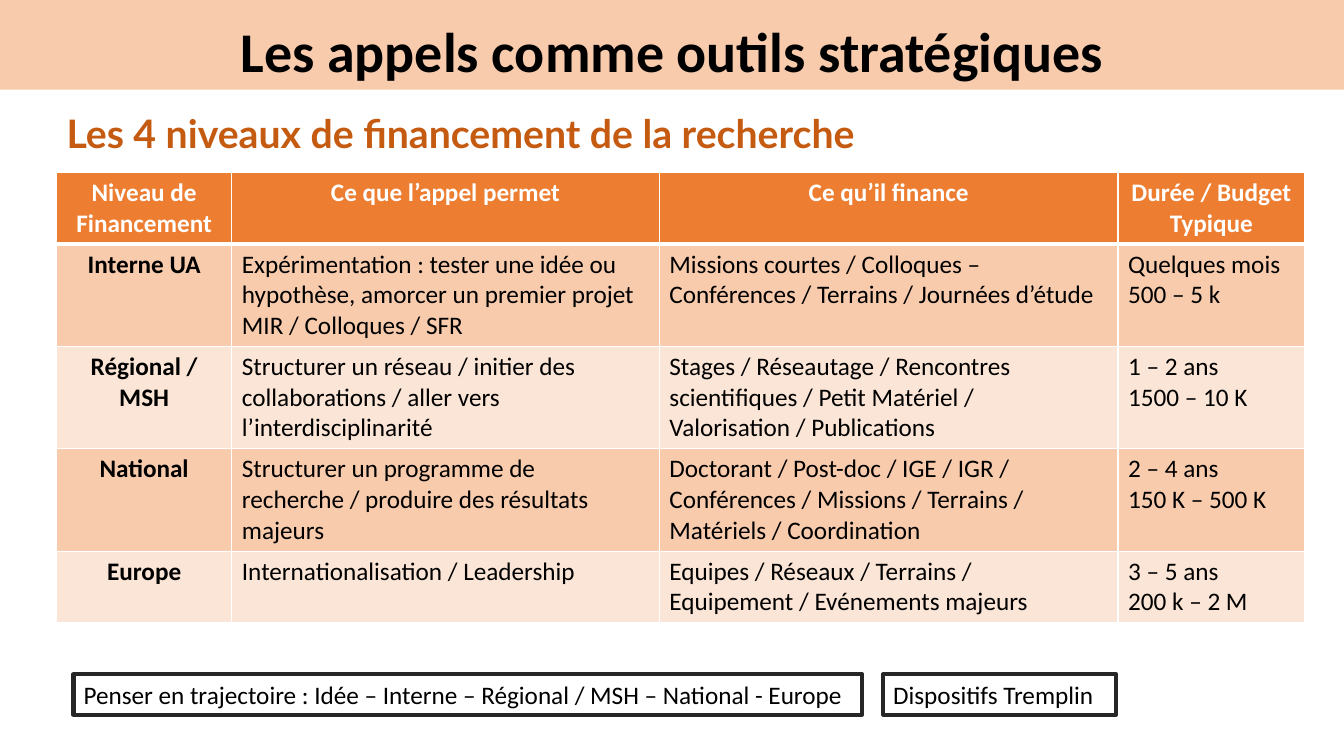
from lxml.etree import SubElement
from pptx import Presentation
from pptx.dml.color import RGBColor
from pptx.enum.shapes import MSO_SHAPE
from pptx.enum.text import MSO_ANCHOR, MSO_AUTO_SIZE, PP_ALIGN
from pptx.oxml.ns import qn
from pptx.util import Inches, Pt

WIDTH, HEIGHT = 13.33, 7.5
LEFT = 0.56
ORANGE, PEACH, CREAM = "ED7D31", "F8CBAD", "FBE5D6"
WHITE, BLACK, RUST, CHARCOAL = "FFFFFF", "000000", "C55A11", "262626"
COLUMN_WIDTHS = [1.74, 4.24, 4.55, 1.85]
LINE_HEIGHT, CELL_PADDING = 0.305, 0.1
ROW_LINES = [2, 3, 3, 3, 2]

FUNDING_LEVELS = [
    ["Niveau de Financement", "Ce que l’appel permet", "Ce qu’il finance",
     "Durée / Budget Typique"],
    ["Interne UA",
     "Expérimentation : tester une idée ou hypothèse, amorcer un premier projet "
     "MIR / Colloques / SFR",
     "Missions courtes / Colloques – Conférences / Terrains / Journées d’étude",
     "Quelques mois\n500 – 5 k"],
    ["Régional / MSH",
     "Structurer un réseau / initier des collaborations / aller vers "
     "l’interdisciplinarité",
     "Stages / Réseautage / Rencontres scientifiques / Petit Matériel / "
     "Valorisation / Publications",
     "1 – 2 ans\n1500 – 10 K"],
    ["National",
     "Structurer un programme de recherche / produire des résultats majeurs",
     "Doctorant / Post-doc / IGE / IGR / Conférences / Missions / Terrains / "
     "Matériels / Coordination",
     "2 – 4 ans\n150 K – 500 K"],
    ["Europe", "Internationalisation / Leadership",
     "Equipes / Réseaux / Terrains / Equipement / Evénements majeurs",
     "3 – 5 ans\n200 k – 2 M"],
]


def rgb(color):
    return RGBColor.from_string(color)


def write(tf, text, size=18, color=BLACK, bold=False, align=PP_ALIGN.LEFT,
          font="Calibri"):
    """Fill a text frame and format all of its runs alike."""
    tf.text = text
    tf.word_wrap = True
    for p in tf.paragraphs:
        p.alignment = align
        for r in p.runs:
            r.font.name, r.font.size, r.font.bold = font, Pt(size), bold
            r.font.color.rgb = rgb(color)


def place(sp, left, top, width, height):
    sp.left, sp.top = Inches(left), Inches(top)
    sp.width, sp.height = Inches(width), Inches(height)


def add_banner(s, text):
    sp = s.shapes.add_shape(MSO_SHAPE.RECTANGLE, 0, 0, Inches(WIDTH),
                            Inches(0.89))
    sp.shadow.inherit = False
    sp.fill.solid()
    sp.fill.fore_color.rgb = rgb(PEACH)
    sp.line.fill.background()
    write(sp.text_frame, text, 40, bold=True, align=PP_ALIGN.CENTER)
    sp.text_frame.vertical_anchor = MSO_ANCHOR.BOTTOM
    sp.text_frame.paragraphs[0].line_spacing = 0.9


def format_title(s, text):
    title = s.shapes.title
    place(title, LEFT, 1.02, 12.21, 0.58)
    tf = title.text_frame
    write(tf, text, 28, RUST, True, font="Lato")
    tf.vertical_anchor = MSO_ANCHOR.BOTTOM
    tf.auto_size = MSO_AUTO_SIZE.NONE


def add_borders(cell, **widths):
    """Draw white borders, with widths in points keyed by side L, R, T, B."""
    tcPr = cell._tc.get_or_add_tcPr()
    for side, width in widths.items():
        ln = SubElement(tcPr, qn(f"a:ln{side}"), w=str(Pt(width)))
        fill = SubElement(ln, qn("a:solidFill"))
        SubElement(fill, qn("a:srgbClr"), val=WHITE)


def add_funding_table(s):
    heights = [n * LINE_HEIGHT + CELL_PADDING for n in ROW_LINES]
    table = s.shapes.add_table(
        len(heights), len(COLUMN_WIDTHS), Inches(LEFT), Inches(1.71),
        Inches(sum(COLUMN_WIDTHS)), Inches(sum(heights))).table
    table.horz_banding = False
    for column, width in zip(table.columns, COLUMN_WIDTHS):
        column.width = Inches(width)
    for i, (row, height, texts) in enumerate(
            zip(table.rows, heights, FUNDING_LEVELS)):
        row.height = Inches(height)
        header = i == 0
        for j, (cell, text) in enumerate(zip(row.cells, texts)):
            heading = header or j == 0
            add_borders(cell, L=1, R=1, T=3 if i == 1 else 1,
                        B=3 if header else 1)
            cell.fill.solid()
            cell.fill.fore_color.rgb = rgb(
                ORANGE if header else PEACH if i % 2 else CREAM)
            write(cell.text_frame, text, color=WHITE if header else BLACK,
                  bold=heading,
                  align=PP_ALIGN.CENTER if heading else PP_ALIGN.LEFT)


def add_framed_note(s, text, left, width):
    sp = s.shapes.add_textbox(0, 0, 0, 0)
    place(sp, left, 6.69, width, 0.4)
    sp.line.color.rgb = rgb(CHARCOAL)
    sp.line.width = Pt(3)
    write(sp.text_frame, text)


def main():
    prs = Presentation()
    prs.slide_width, prs.slide_height = Inches(WIDTH), Inches(HEIGHT)
    s = prs.slides.add_slide(prs.slide_layouts.get_by_name("Title Only"))
    format_title(s, "Les 4 niveaux de financement de la recherche")
    add_banner(s, "Les appels comme outils stratégiques")
    add_funding_table(s)
    add_framed_note(s, "Dispositifs Tremplin", 8.76, 2.31)
    add_framed_note(
        s, "Penser en trajectoire : Idée – Interne – Régional / MSH – "
        "National - Europe", 0.73, 7.82)
    prs.save("out.pptx")


if __name__ == "__main__":
    main()
